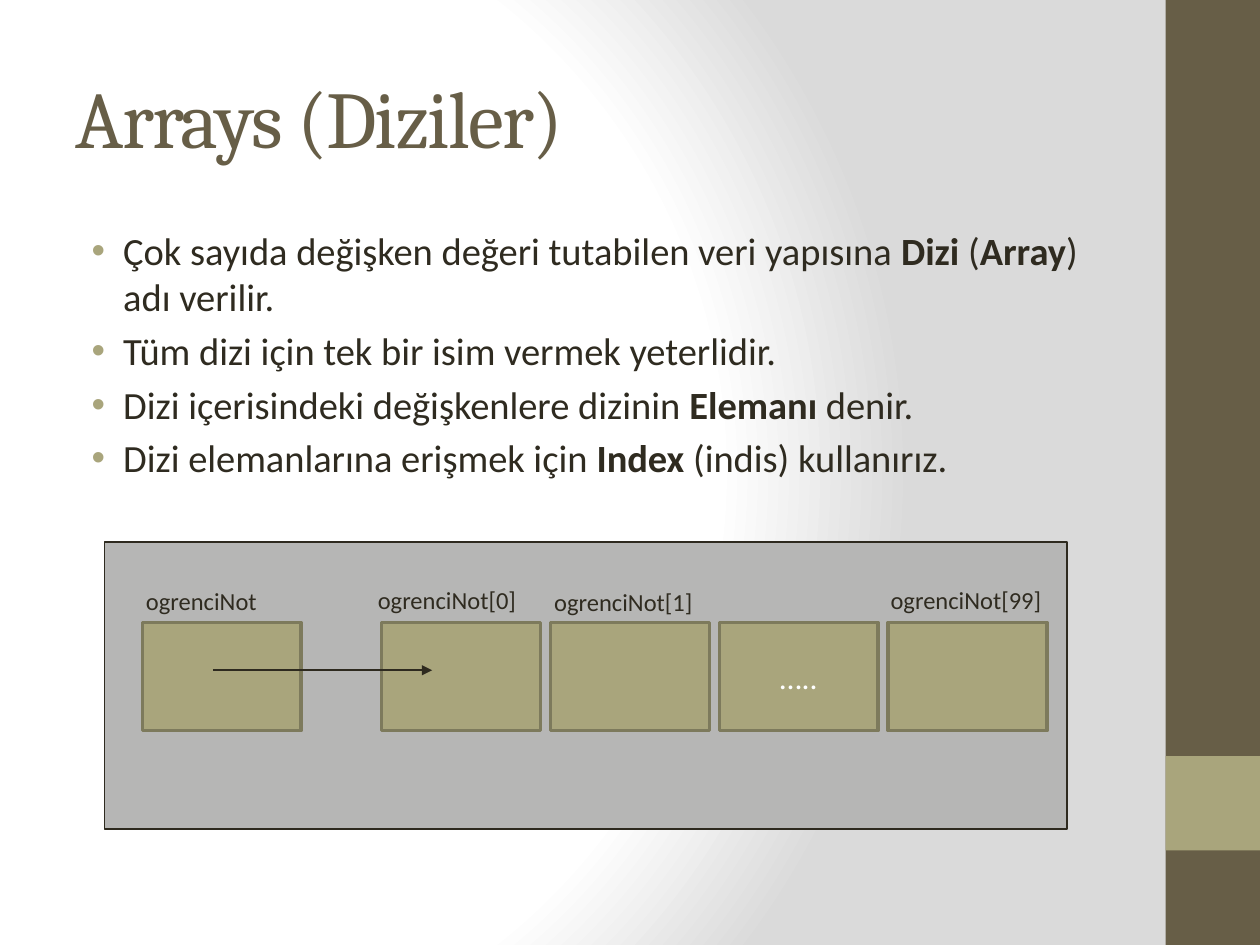
from lxml import etree
from pptx import Presentation
from pptx.dml.color import RGBColor
from pptx.enum import shapes, text
from pptx.oxml import parse_xml
from pptx.oxml.ns import nsdecls, qn
from pptx.util import Inches, Pt

BROWN, OLIVE, OLIVE_EDGE = "675E47", "A9A57C", "7D7A5C"
INK, EDGE, GREY, WHITE = "2F2B20", "2E2A1F", "B6B6B5", "FFFFFF"

BULLETS = [
    "Çok sayıda değişken değeri tutabilen veri yapısına **Dizi** (**Array**) adı verilir.",
    "Tüm dizi için tek bir isim vermek yeterlidir.",
    "Dizi içerisindeki değişkenlere dizinin **Elemanı** denir.",
    "Dizi elemanlarına erişmek için **Index** (indis) kullanırız.",
]
LABELS = [
    ("ogrenciNot", 1.06, 4.6, 1.39),
    ("ogrenciNot[0]", 2.9, 4.59, 1.39),
    ("ogrenciNot[1]", 4.3, 4.61, 1.39),
    ("ogrenciNot[99]", 6.97, 4.59, 1.5),
]
CELL_TOP, CELL_WIDTH, CELL_HEIGHT, CELL_STEP = 4.94, 1.26, 0.86, 1.34
ARRAY_LEFT, REFERENCE_LEFT = 3.03, 1.13


def color(value):
    return RGBColor.from_string(value)


def write(para, content, size=14, font="Calibri", ink=INK, align=text.PP_ALIGN.LEFT):
    """Fill a paragraph; parts between ** marks are bold."""
    para.alignment = align
    for index, part in enumerate(content.split("**")):
        span = para.add_run()
        span.text = part
        span.font.size = Pt(size)
        span.font.name = font
        span.font.color.rgb = color(ink)
        span.font.bold = index % 2 == 1


def paint_background(page):
    page.background.fill.gradient()
    old = page.element.find(".//" + qn("a:gradFill"))
    stops = "".join(
        f'<a:gs pos="{position}000"><a:srgbClr val="{shade}"/></a:gs>'
        for position, shade in [(0, WHITE), (75, WHITE), (100, "DADADA")])
    old.getparent().replace(old, parse_xml(
        f'<a:gradFill {nsdecls("a")} rotWithShape="1"><a:gsLst>{stops}</a:gsLst>'
        '<a:path path="circle"><a:fillToRect l="20000" t="50000" r="100000" b="50000"/>'
        '</a:path></a:gradFill>'))


def add_box(page, left, top, width, height, fill, line=None, weight=2):
    box = page.shapes.add_shape(shapes.MSO_SHAPE.RECTANGLE, Inches(left), Inches(top),
                                Inches(width), Inches(height))
    box.shadow.inherit = False
    box.fill.solid()
    box.fill.fore_color.rgb = color(fill)
    if line:
        box.line.color.rgb = color(line)
        box.line.width = Pt(weight)
    else:
        box.line.fill.background()
    return box


def add_text_frame(page, left, top, width, height):
    box = page.shapes.add_textbox(Inches(left), Inches(top), Inches(width), Inches(height))
    box.text_frame.word_wrap = True
    return box.text_frame


def add_title(page, content):
    title = page.shapes.title
    title.left, title.top = Inches(0.5), Inches(0.3)
    title.width, title.height = Inches(8.33), Inches(1.25)
    frame = title.text_frame
    frame.auto_size = text.MSO_AUTO_SIZE.NONE
    frame.vertical_anchor = text.MSO_ANCHOR.MIDDLE
    write(frame.paragraphs[0], content, size=46, font="Cambria", ink=BROWN)
    frame.paragraphs[0].runs[0].font._element.set("spc", "-100")


def add_bullets(page, items):
    frame = add_text_frame(page, 0.5, 1.75, 8.33, 5.25)
    for index, item in enumerate(items):
        para = frame.add_paragraph() if index else frame.paragraphs[0]
        write(para, item, size=22)
        para.space_before = Pt(4.4)
        properties = para._p.get_or_add_pPr()
        properties.set("marL", str(Inches(0.38)))
        properties.set("indent", str(Inches(-0.25)))
        bullet_color = etree.SubElement(properties, qn("a:buClr"))
        etree.SubElement(bullet_color, qn("a:srgbClr"), val=OLIVE)
        etree.SubElement(properties, qn("a:buFont"), typeface="Arial")
        etree.SubElement(properties, qn("a:buChar"), char="•")


def add_label(page, content, left, top, width):
    frame = add_text_frame(page, left, top, width, 0.34)
    frame.auto_size = text.MSO_AUTO_SIZE.SHAPE_TO_FIT_TEXT
    write(frame.paragraphs[0], content)


def add_arrow(page, start, end, y):
    arrow = page.shapes.add_connector(shapes.MSO_CONNECTOR.STRAIGHT, Inches(start), Inches(y),
                                      Inches(end), Inches(y))
    arrow.line.color.rgb = color(EDGE)
    arrow.line.width = Pt(1)
    etree.SubElement(arrow.line._get_or_add_ln(), qn("a:tailEnd"), type="triangle")
    etree.SubElement(arrow._element.spPr, qn("a:effectLst"))


def add_array_diagram(page):
    add_box(page, 0.83, 4.3, 7.64, 2.28, GREY, EDGE, weight=1)
    lefts = [REFERENCE_LEFT] + [ARRAY_LEFT + CELL_STEP * index for index in range(4)]
    cells = [add_box(page, left, CELL_TOP, CELL_WIDTH, CELL_HEIGHT, OLIVE, OLIVE_EDGE)
             for left in lefts]
    gap_frame = cells[3].text_frame
    gap_frame.vertical_anchor = text.MSO_ANCHOR.MIDDLE
    write(gap_frame.paragraphs[0], "…..", size=18, ink=WHITE, align=text.PP_ALIGN.CENTER)
    for label in LABELS:
        add_label(page, *label)
    add_arrow(page, 1.69, 3.43, 5.32)


def main():
    deck = Presentation()
    deck.slide_width, deck.slide_height = Inches(10), Inches(7.5)
    page = deck.slides.add_slide(deck.slide_layouts[5])
    paint_background(page)
    add_box(page, 9.25, 0, 0.75, 7.5, BROWN)
    add_box(page, 9.25, 6, 0.75, 0.75, OLIVE)
    add_title(page, "Arrays (Diziler)")
    add_bullets(page, BULLETS)
    add_array_diagram(page)
    deck.save("out.pptx")


if __name__ == "__main__":
    main()
